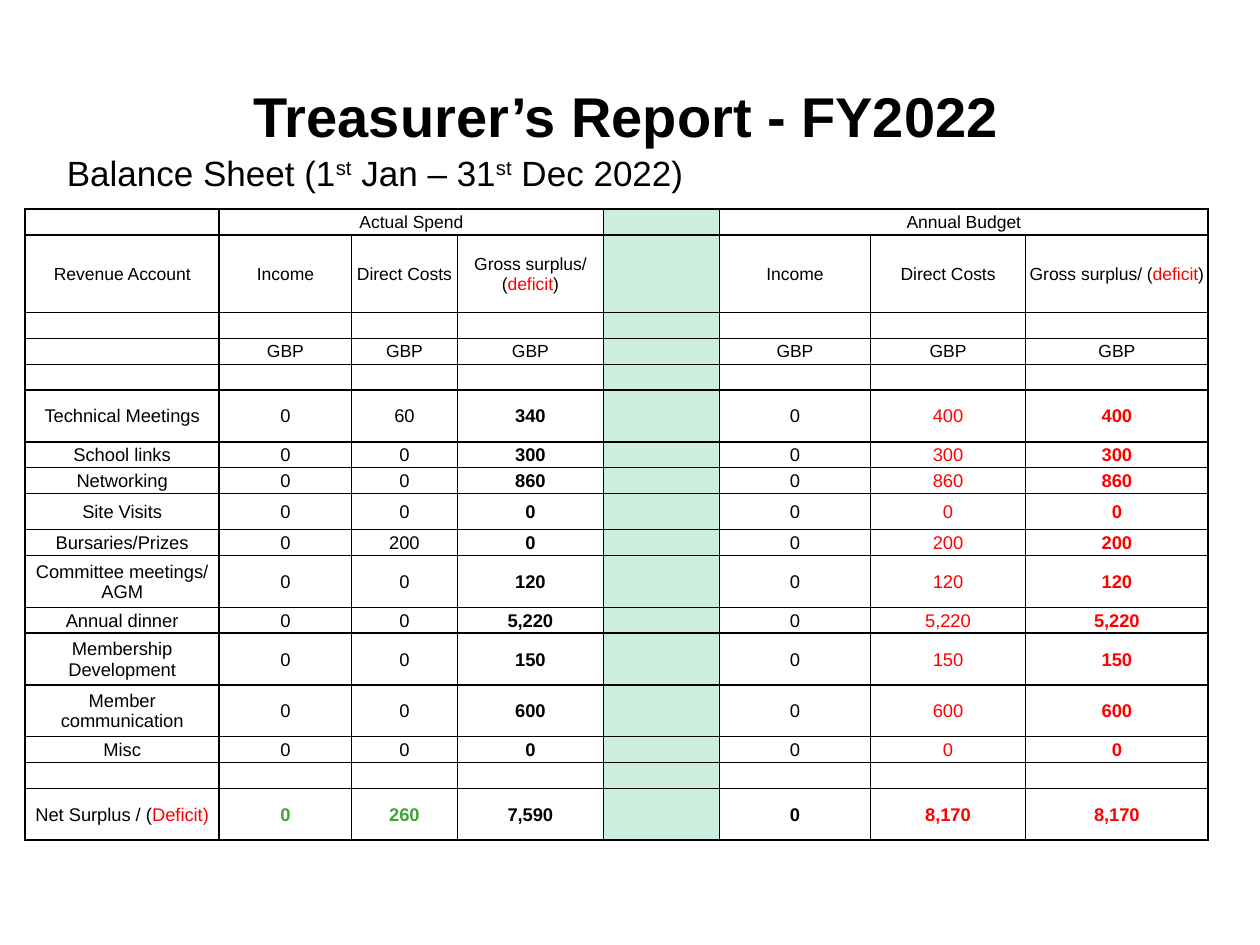
from lxml.etree import SubElement
from pptx import Presentation
from pptx.dml.color import RGBColor
from pptx.enum.text import MSO_ANCHOR, PP_ALIGN
from pptx.oxml.ns import qn
from pptx.util import Emu, Inches, Pt

FONT = "Arial"
COLORS = {"black": "000000", "red": "FF0000", "green": "3FA43A", "divider": "CCEEDF"}

# Content: a cell is a string, or a list of (text, colour) runs
TITLE = "Treasurer’s Report - FY2022"
SUBTITLE = [("Balance Sheet (1", 0), ("st", 30), (" Jan – 31", 0), ("st", 30), (" Dec 2022)", 0)]
SURPLUS = [("Gross surplus/ (", "black"), ("deficit", "red"), (")", "black")]
MEASURES = ["Income", "Direct Costs", SURPLUS]
UNITS = ["GBP"] * 3
BLANK = [""] * 8
HEADERS = [
    ["", "Actual Spend", "", "", "", "Annual Budget", "", ""],
    ["Revenue Account", *MEASURES, "", *MEASURES],
    BLANK,
    ["", *UNITS, "", *UNITS],
    BLANK,
]
# Account, actual costs, actual surplus, budget
ACCOUNTS = [
    ("Technical Meetings", "60", "340", "400"),
    ("School links", "0", "300", "300"),
    ("Networking", "0", "860", "860"),
    ("Site Visits", "0", "0", "0"),
    ("Bursaries/Prizes", "200", "0", "200"),
    ("Committee meetings/ AGM", "0", "120", "120"),
    ("Annual dinner", "0", "5,220", "5,220"),
    ("Membership Development", "0", "150", "150"),
    ("Member communication", "0", "600", "600"),
    ("Misc", "0", "0", "0"),
]
TOTAL = [[("Net Surplus / (", "black"), ("Deficit)", "red")],
         "0", "260", "7,590", "", "0", "8,170", "8,170"]
ROWS = HEADERS + [
    [account, "0", costs, surplus, "", "0", budget, budget]
    for account, costs, surplus, budget in ACCOUNTS
] + [BLANK, TOTAL]

# Grid: column widths in inches, row heights in text lines
COLUMN_WIDTHS = [1.54, 1.05, 0.84, 1.16, 0.92, 1.2, 1.23, 1.45]
ROW_LINES = [1, 3, 1, 1, 1, 2, 1, 1, 1.4, 1, 2, 1, 2, 2, 1, 1, 2]
TABLE_HEIGHT = 5.01
DIVIDER = 4
BUDGET_COLUMNS = (6, 7)
SURPLUS_COLUMNS = (3, 7)
GROUP_STARTS = (1, 5)


def format_font(font, size, color="black", bold=False):
    for name, value in {"name": FONT, "size": Pt(size), "bold": bold}.items():
        setattr(font, name, value)
    font.color.rgb = RGBColor.from_string(COLORS[color])


def place(shape, left, top, width, height):
    for name, value in {"left": left, "top": top, "width": width, "height": height}.items():
        setattr(shape, name, Inches(value))


def cell_style(row, column):
    """Size, colour and weight follow from the part of the table."""
    if row < len(HEADERS):
        return 10, "black", False
    is_total = row == len(ROWS) - 1
    color = "red" if column in BUDGET_COLUMNS else "black"
    if is_total and column in (1, 2):
        color = "green"
    return 10.5, color, column in SURPLUS_COLUMNS or (is_total and column > 0)


def add_borders(cell):
    properties = cell._tc.get_or_add_tcPr()
    for side in ("a:lnL", "a:lnR", "a:lnT", "a:lnB"):
        line = SubElement(properties, qn(side), w=str(Pt(1)))
        fill = SubElement(line, qn("a:solidFill"))
        SubElement(fill, qn("a:srgbClr"), val=COLORS["black"])


def fill_cell(cell, content, row, column):
    margins = dict.fromkeys(("margin_left", "margin_right", "margin_top"), Inches(0.01))
    for name, value in {**margins, "margin_bottom": 0,
                        "vertical_anchor": MSO_ANCHOR.MIDDLE}.items():
        setattr(cell, name, value)
    add_borders(cell)
    if column == DIVIDER:
        cell.fill.solid()
        cell.fill.fore_color.rgb = RGBColor.from_string(COLORS["divider"])
    else:
        cell.fill.background()

    size, color, bold = cell_style(row, column)
    paragraph = cell.text_frame.paragraphs[0]
    paragraph.alignment = PP_ALIGN.CENTER
    if not content:  # keeps an empty row from growing
        SubElement(paragraph._p, qn("a:endParaRPr"), sz=str(int(size * 100)))
        return
    runs = [(content, color)] if isinstance(content, str) else content
    for text, run_color in runs:
        run = paragraph.add_run()
        run.text = text
        format_font(run.font, size, run_color, bold)


def add_headings(slide):
    title, body = slide.placeholders
    place(title, 0.43, 0.29, 9.08, 1.25)
    title.text_frame.vertical_anchor = MSO_ANCHOR.MIDDLE
    paragraph = title.text_frame.paragraphs[0]
    paragraph.alignment = PP_ALIGN.CENTER
    run = paragraph.add_run()
    run.text = TITLE
    format_font(run.font, 32, bold=True)

    place(body, 0.43, 1.15, 9, 0.51)
    paragraph = body.text_frame.paragraphs[0]
    paragraph.space_before = Pt(0)
    properties = paragraph._p.get_or_add_pPr()
    properties.set("marL", "0")
    properties.set("indent", "0")
    SubElement(properties, qn("a:buNone"))
    for text, baseline in SUBTITLE:
        run = paragraph.add_run()
        run.text = text
        format_font(run.font, 20)
        if baseline:
            run.font._element.set("baseline", str(baseline * 1000))


def add_balance_sheet(slide):
    frame = slide.shapes.add_table(
        len(ROWS), len(COLUMN_WIDTHS), Inches(0.2), Inches(1.66),
        Inches(sum(COLUMN_WIDTHS)), Inches(TABLE_HEIGHT))
    table = frame.table
    table.first_row = table.horz_banding = False
    for column, width in zip(table.columns, COLUMN_WIDTHS):
        column.width = Inches(width)
    for row, lines in zip(table.rows, ROW_LINES):
        row.height = Emu(int(Inches(TABLE_HEIGHT) * lines / sum(ROW_LINES)))
    for row, contents in enumerate(ROWS):
        for column, content in enumerate(contents):
            fill_cell(table.cell(row, column), content, row, column)
    for start in GROUP_STARTS:
        table.cell(0, start).merge(table.cell(0, start + 2))


def main():
    presentation = Presentation()
    presentation.slide_width = Inches(10)
    presentation.slide_height = Inches(7.5)
    slide = presentation.slides.add_slide(presentation.slide_layouts[1])
    add_headings(slide)
    add_balance_sheet(slide)
    presentation.save("out.pptx")


if __name__ == "__main__":
    main()
